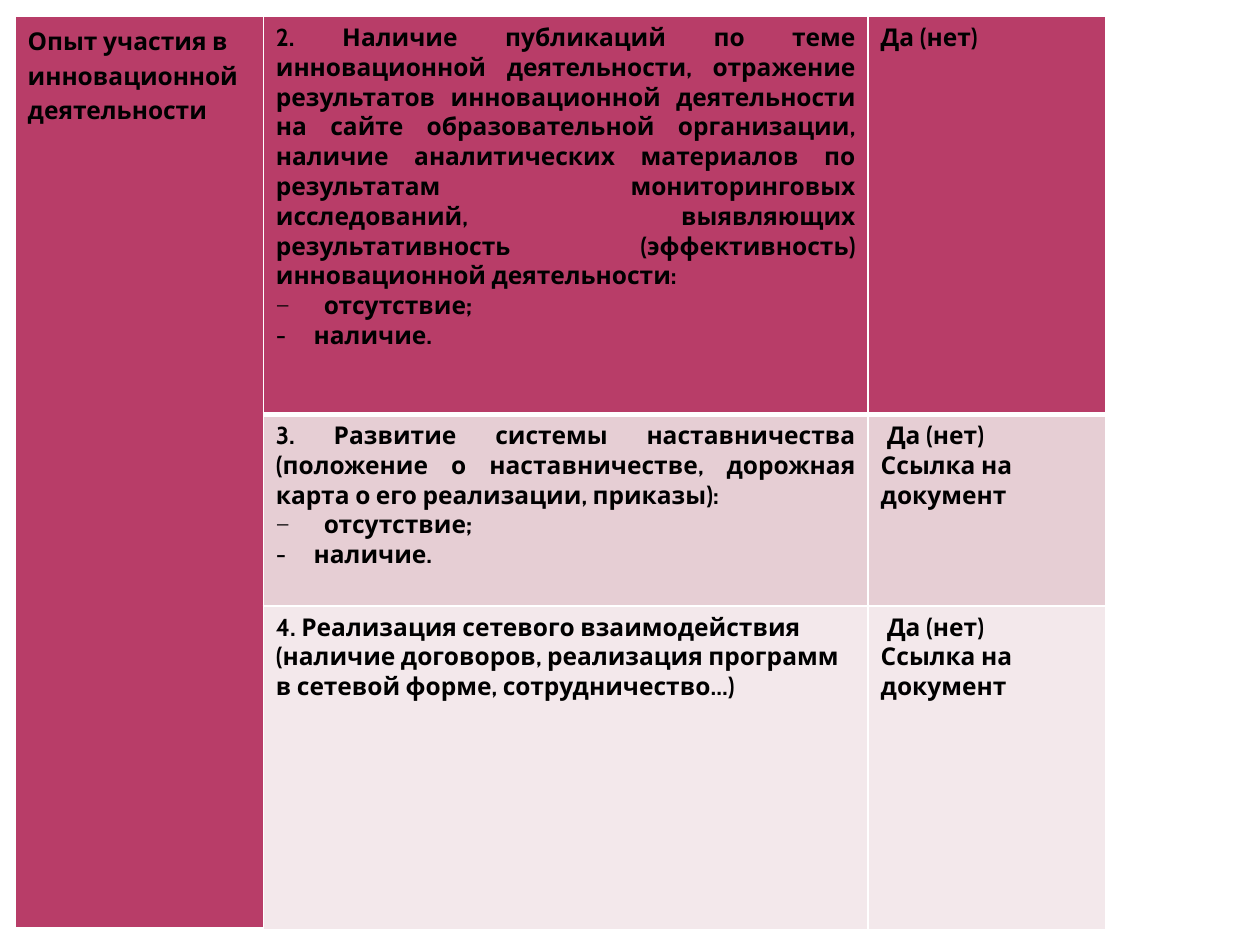
"""Build a slide with a table of criteria for innovation experience."""
from dataclasses import dataclass

import pptx
import pptx.dml.color
import pptx.enum.text
import pptx.oxml.ns
import pptx.util
from lxml import etree

Inches = pptx.util.Inches
Pt = pptx.util.Pt
RGB = pptx.dml.color.RGBColor.from_string
ALIGN = pptx.enum.text.PP_ALIGN


@dataclass(frozen=True)
class Theme:
    font: str = "Cabin"
    bullet_font: str = "Times New Roman"
    size: int = 14
    text: str = "000000"
    border: str = "FFFFFF"
    rows: tuple = ("B83D68", "E6CED4", "F3E8EB")
    thin: int = 1
    thick: int = 3


THEME = Theme()
COLUMNS = (1.97, 4.8, 1.89)
ROWS = (3.16, 1.52, 2.57)

JUSTIFY = dict(align=ALIGN.JUSTIFY)
CHOICES = [
    ("отсутствие;", dict(align=ALIGN.JUSTIFY, bullet="−", indent=0.38,
                         bullet_font=THEME.bullet_font)),
    ("наличие.", dict(bullet="-", indent=0.3)),
]
ANSWER = [
    ("Да (нет)", dict(align=ALIGN.JUSTIFY, indent=0.05)),
    ("Ссылка на документ", {}),
]
TOPIC = [("Опыт участия в инновационной деятельности",
          dict(line_spacing=1.15, space_after=10))]
CRITERIA = [
    ([("2. Наличие публикаций по теме инновационной деятельности, отражение "
       "результатов инновационной деятельности на сайте образовательной "
       "организации, наличие аналитических материалов по результатам "
       "мониторинговых исследований, выявляющих результативность "
       "(эффективность) инновационной деятельности:", JUSTIFY), *CHOICES],
     [("Да (нет)", {})]),
    ([("3. Развитие системы наставничества (положение о наставничестве, "
       "дорожная карта о его реализации, приказы):", JUSTIFY), *CHOICES],
     ANSWER),
    ([("4. Реализация сетевого взаимодействия (наличие договоров, реализация "
       "программ в сетевой форме, сотрудничество…)", {})],
     ANSWER),
]


def add_child(parent, tag, **attrs):
    """Append a DrawingML element with the given attributes."""
    child = etree.SubElement(parent, pptx.oxml.ns.qn(tag))
    for name, value in attrs.items():
        child.set(name, str(value))
    return child


def write_text(p, text, align=ALIGN.LEFT, bullet=None, bullet_font=THEME.font,
               indent=0, line_spacing=None, space_after=0):
    """Write text into a paragraph with its format."""
    pPr = p._p.get_or_add_pPr()
    pPr.set("marL", str(Inches(indent)))
    if bullet:
        pPr.set("indent", str(-Inches(indent)))
        add_child(pPr, "a:buFont", typeface=bullet_font)
        add_child(pPr, "a:buChar", char=bullet)
    p.alignment = align
    p.line_spacing = line_spacing
    p.space_after = Pt(space_after)
    r = p.add_run()
    r.text = text
    r.font.name = THEME.font
    r.font.size = Pt(THEME.size)
    r.font.bold = True
    r.font.color.rgb = RGB(THEME.text)


def style_cell(cell, fill, top, bottom):
    """Give a cell its borders and fill."""
    tcPr = cell._tc.get_or_add_tcPr()
    widths = {"a:lnL": THEME.thin, "a:lnR": THEME.thin,
              "a:lnT": top, "a:lnB": bottom}
    for tag, width in widths.items():
        line = add_child(tcPr, tag, w=Pt(width))
        add_child(add_child(line, "a:solidFill"), "a:srgbClr", val=THEME.border)
    cell.fill.solid()
    cell.fill.fore_color.rgb = RGB(fill)


def fill_cell(cell, paragraphs):
    """Write a list of formatted paragraphs into a cell."""
    tf = cell.text_frame
    for i, (text, style) in enumerate(paragraphs):
        p = tf.add_paragraph() if i else tf.paragraphs[0]
        write_text(p, text, **style)


def add_criteria_table(s):
    """Add the criteria table with the topic spanning its first column."""
    table = s.shapes.add_table(
        len(ROWS), len(COLUMNS), Inches(0.12), Inches(0.13),
        Inches(sum(COLUMNS)), Inches(sum(ROWS))).table
    for column, width in zip(table.columns, COLUMNS):
        column.width = Inches(width)
    for i, (row, height) in enumerate(zip(table.rows, ROWS)):
        row.height = Inches(height)
        top = THEME.thick if i == 1 else THEME.thin
        bottom = THEME.thick if i == 0 else THEME.thin
        for j, cell in enumerate(row.cells):
            style_cell(cell, THEME.rows[i if j else 0], top, bottom)
        for j, paragraphs in enumerate(CRITERIA[i], 1):
            fill_cell(table.cell(i, j), paragraphs)
    table.cell(0, 0).merge(table.cell(len(ROWS) - 1, 0))
    fill_cell(table.cell(0, 0), TOPIC)


def main():
    """Build and save the presentation."""
    prs = pptx.Presentation()
    prs.slide_width, prs.slide_height = Inches(10), Inches(7.5)
    s = prs.slides.add_slide(prs.slide_layouts[6])
    add_criteria_table(s)
    prs.save("out.pptx")


if __name__ == "__main__":
    main()
